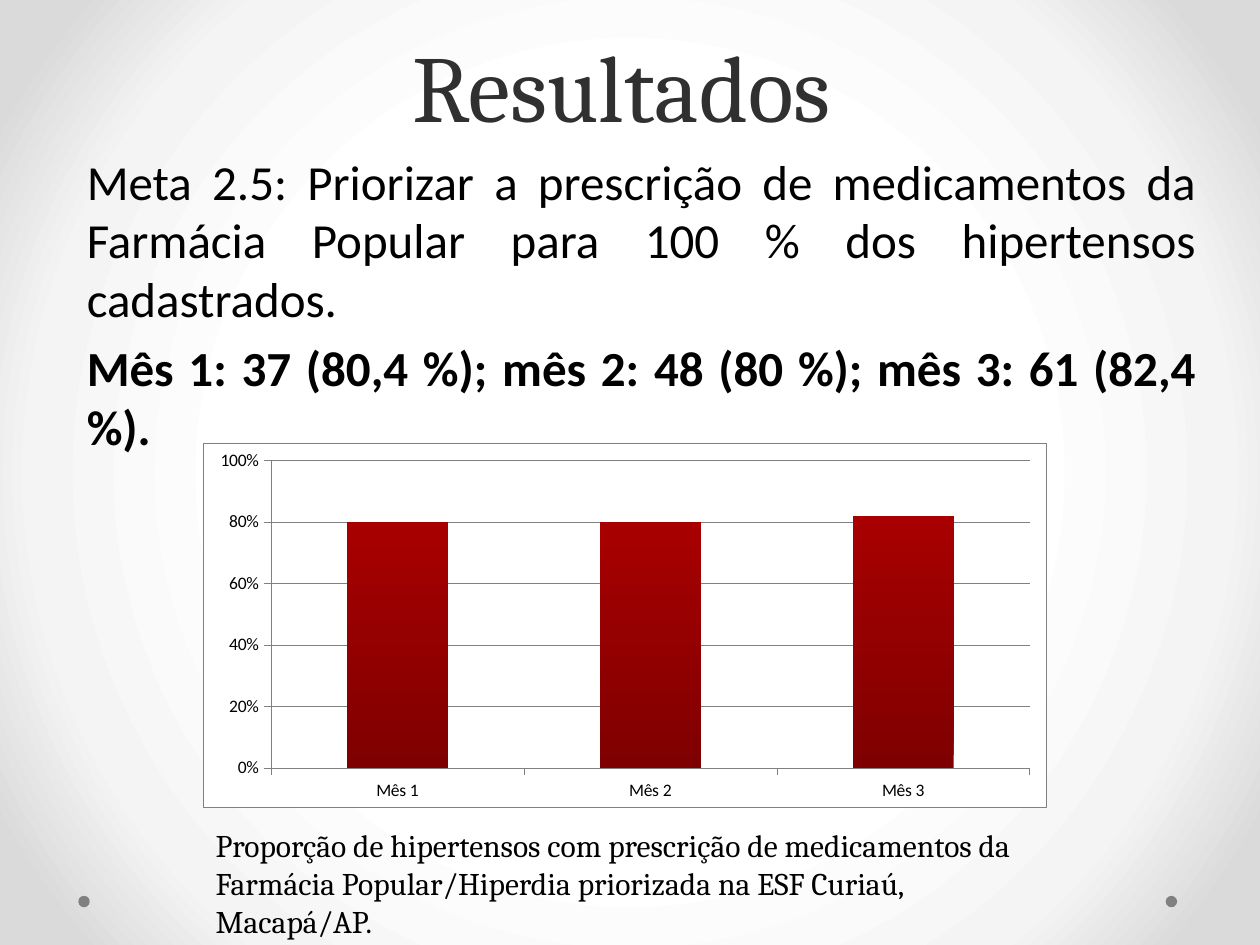
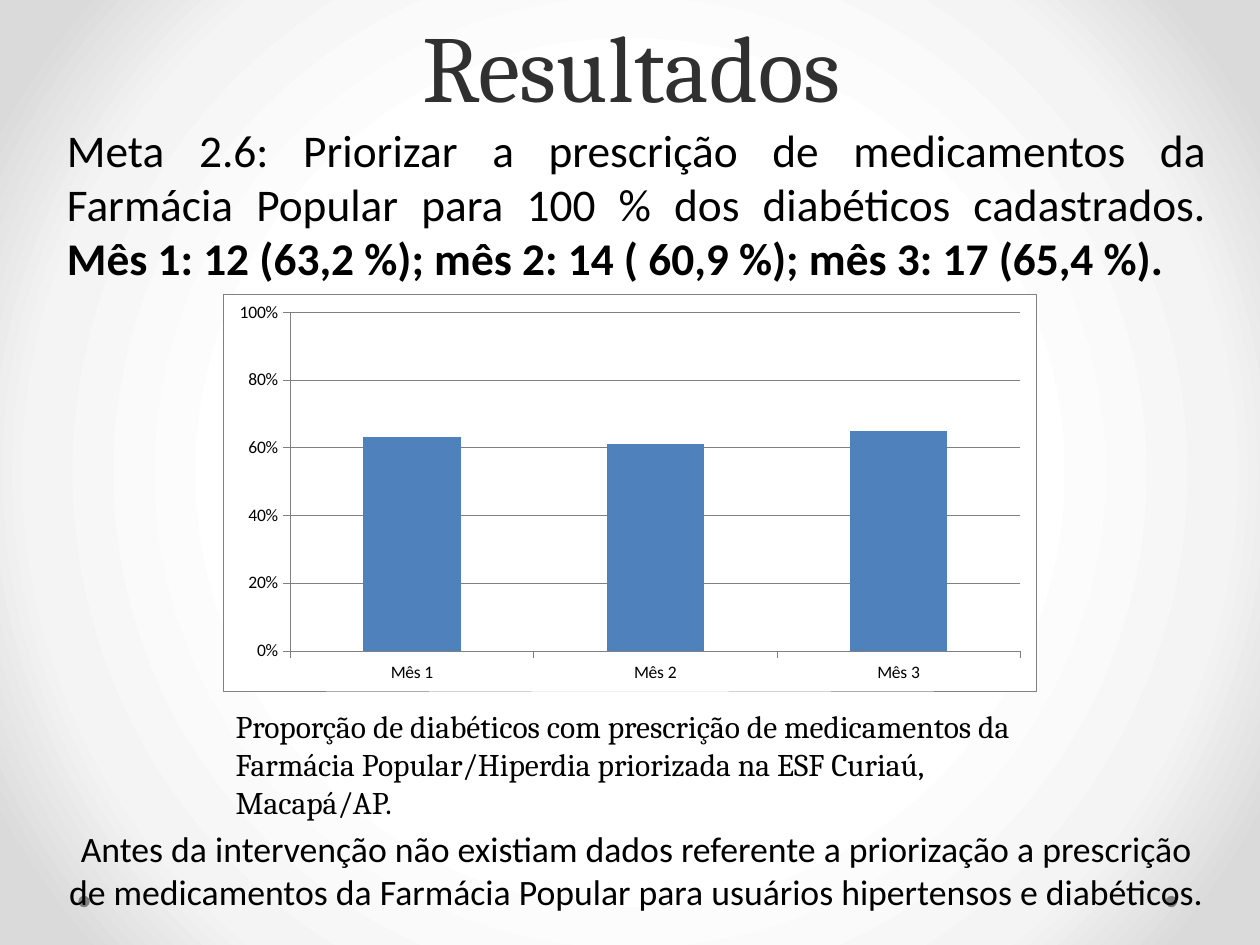
from lxml.etree import fromstring
from pptx import Presentation
from pptx.chart.data import CategoryChartData
from pptx.dml.color import RGBColor
from pptx.enum.chart import XL_CHART_TYPE as ChartType, XL_TICK_MARK as Tick
from pptx.enum.shapes import MSO_SHAPE as Shape
from pptx.enum.text import MSO_ANCHOR as Anchor, MSO_AUTO_SIZE as AutoSize, PP_ALIGN as Align
from pptx.util import Cm, Pt

BLACK = RGBColor(0x00, 0x00, 0x00)
CHARCOAL = RGBColor(0x30, 0x30, 0x30)
GRAY = RGBColor(0x80, 0x80, 0x80)
RED = RGBColor(0xA8, 0x00, 0x00)
DARK_RED = RGBColor(0x7F, 0x00, 0x00)
BLUE = RGBColor(0x4F, 0x81, 0xBD)
WHITE = RGBColor(0xFF, 0xFF, 0xFF)
PALE = RGBColor(0xF4, 0xF4, 0xF4)
SILVER = RGBColor(0xDA, 0xDA, 0xDA)
HEADING_FONT, BODY_FONT = "Cambria", "Calibri"
DRAWING = "http://schemas.openxmlformats.org/drawingml/2006/main"
CHART = "http://schemas.openxmlformats.org/drawingml/2006/chart"

RESULTS = [
    {
        "title": (1.1, -1.47, 22.86, 4.45),
        "goal": (1.5, 2.92, 22.86, 9),
        "goal_size": 28,
        "paragraphs": [
            [("Meta 2.5: Priorizar a prescrição de medicamentos da Farmácia Popular "
              "para 100 % dos hipertensos cadastrados.", False)],
            [("Mês 1: 37 (80,4 %); mês 2: 48 (80 %); mês 3: 61 (82,4 %).", True)],
        ],
        "chart": (4.1, 8.93, 17, 7.35),
        "values": (0.8, 0.8, 0.82),
        "colors": (DARK_RED, RED),
        "caption": (4.1, 16.53, 17.2, 2.57),
        "group": "hipertensos",
        "note": "",
    },
    {
        "title": (1.3, -0.07, 22.86, 2.64),
        "goal": (1.1, 2.33, 23.47, 4),
        "goal_size": 25.9,
        "paragraphs": [
            [("Meta 2.6: Priorizar a prescrição de medicamentos da Farmácia Popular "
              "para 100 % dos diabéticos cadastrados. ", False),
             ("Mês 1: 12 (63,2 %); mês 2: 14 ( 60,9 %); mês 3: 17 (65,4 %).", True)],
        ],
        "chart": (4.5, 5.93, 16.4, 8),
        "values": (0.63, 0.61, 0.65),
        "colors": (BLUE,),
        "caption": (4.5, 14.13, 16.41, 2.57),
        "group": "diabéticos",
        "note": "Antes da intervenção não existiam dados referente a priorização a prescrição "
                "de medicamentos da Farmácia Popular para usuários hipertensos e diabéticos.",
    },
]


def add_text(page, place, paragraphs, font, size, align, before=0):
    frame = page.shapes.add_textbox(*map(Cm, place)).text_frame
    frame.word_wrap = True
    for index, runs in enumerate(paragraphs):
        para = frame.add_paragraph() if index else frame.paragraphs[0]
        para.alignment = align
        para.space_before = Pt(before)
        for words, bold in runs:
            span = para.add_run()
            span.text = words
            span.font.name = font
            span.font.size = Pt(size)
            span.font.bold = bold
            span.font.color.rgb = BLACK


def chart_frame(line):
    return fromstring(
        f'<c:spPr xmlns:c="{CHART}" xmlns:a="{DRAWING}">'
        f'<a:solidFill><a:srgbClr val="{WHITE}"/></a:solidFill><a:ln w="3175">{line}</a:ln></c:spPr>')


deck = Presentation()
deck.slide_width, deck.slide_height = Cm(25.4), Cm(19.05)

backdrop = deck.slide_master.background.fill
backdrop.solid()
solid = deck.slide_master.element.find(f".//{{{DRAWING}}}solidFill")
stops = "".join(f'<a:gs pos="{place * 1000}"><a:srgbClr val="{color}"/></a:gs>'
                for place, color in ((50, WHITE), (76, PALE), (92, SILVER)))
solid.getparent().replace(solid, fromstring(
    f'<a:gradFill xmlns:a="{DRAWING}" rotWithShape="1"><a:gsLst>{stops}</a:gsLst><a:path path="circle">'
    '<a:fillToRect l="50000" t="50000" r="50000" b="50000"/></a:path></a:gradFill>'))

for result in RESULTS:
    page = deck.slides.add_slide(deck.slide_layouts[5])

    for left in (23.5, 1.58):
        dot = page.shapes.add_shape(Shape.OVAL, Cm(left), Cm(18.06), Cm(0.23), Cm(0.23))
        dot.shadow.inherit = False
        dot.fill.solid()
        dot.fill.fore_color.rgb = GRAY
        dot.line.fill.background()

    title = page.shapes.title
    title.left, title.top, title.width, title.height = map(Cm, result["title"])
    title.text_frame.vertical_anchor = Anchor.BOTTOM
    title.text_frame.auto_size = AutoSize.NONE
    para = title.text_frame.paragraphs[0]
    para.alignment = Align.CENTER
    para.line_spacing = Pt(58)
    span = para.add_run()
    span.text = "Resultados"
    span.font.name = HEADING_FONT
    span.font.size = Pt(54)
    span.font.color.rgb = CHARCOAL

    add_text(page, result["goal"], result["paragraphs"], BODY_FONT,
             result["goal_size"], Align.JUSTIFY, result["goal_size"] * 0.2)

    data = CategoryChartData(number_format="0%")
    data.categories = ["Mês 1", "Mês 2", "Mês 3"]
    data.add_series("Series 1", result["values"])
    chart = page.shapes.add_chart(
        ChartType.COLUMN_CLUSTERED, *map(Cm, result["chart"]), data).chart
    chart.has_legend = False
    chart.has_title = False
    chart.font.name = BODY_FONT
    chart.font.size = Pt(10)
    chart.font.color.rgb = BLACK
    scale = chart.value_axis
    scale.minimum_scale, scale.maximum_scale, scale.major_unit = 0, 1, 0.2
    scale.tick_labels.number_format = "0%"
    scale.tick_labels.number_format_is_linked = False
    for part in (chart.category_axis, scale, scale.major_gridlines):
        part.format.line.color.rgb = GRAY
        part.format.line.width = Pt(0.25)
    for axis in (chart.category_axis, scale):
        axis.major_tick_mark = Tick.OUTSIDE

    plot = chart.plots[0]
    plot.gap_width = 150
    plot.vary_by_categories = False
    bars = plot.series[0].format.fill
    if len(result["colors"]) > 1:
        bars.gradient()
        bars.gradient_angle = 90
        for stop, color in zip(bars.gradient_stops, result["colors"]):
            stop.color.rgb = color
    else:
        bars.solid()
        bars.fore_color.rgb = result["colors"][0]

    body = chart.element.find(f"{{{CHART}}}chart")
    body.find(f"{{{CHART}}}plotArea").append(chart_frame("<a:noFill/>"))
    body.addnext(chart_frame(f'<a:solidFill><a:srgbClr val="{GRAY}"/></a:solidFill>'))

    caption = (f"Proporção de {result['group']} com prescrição de medicamentos da "
               "Farmácia Popular/Hiperdia priorizada na ESF Curiaú, Macapá/AP.")
    add_text(page, result["caption"], [[(caption, False)]], HEADING_FONT, 18, Align.LEFT)
    if result["note"]:
        add_text(page, (1.09, 16.55, 23.47, 2.2), [[(result["note"], False)]],
                 BODY_FONT, 20.4, Align.CENTER)

deck.save("out.pptx")
